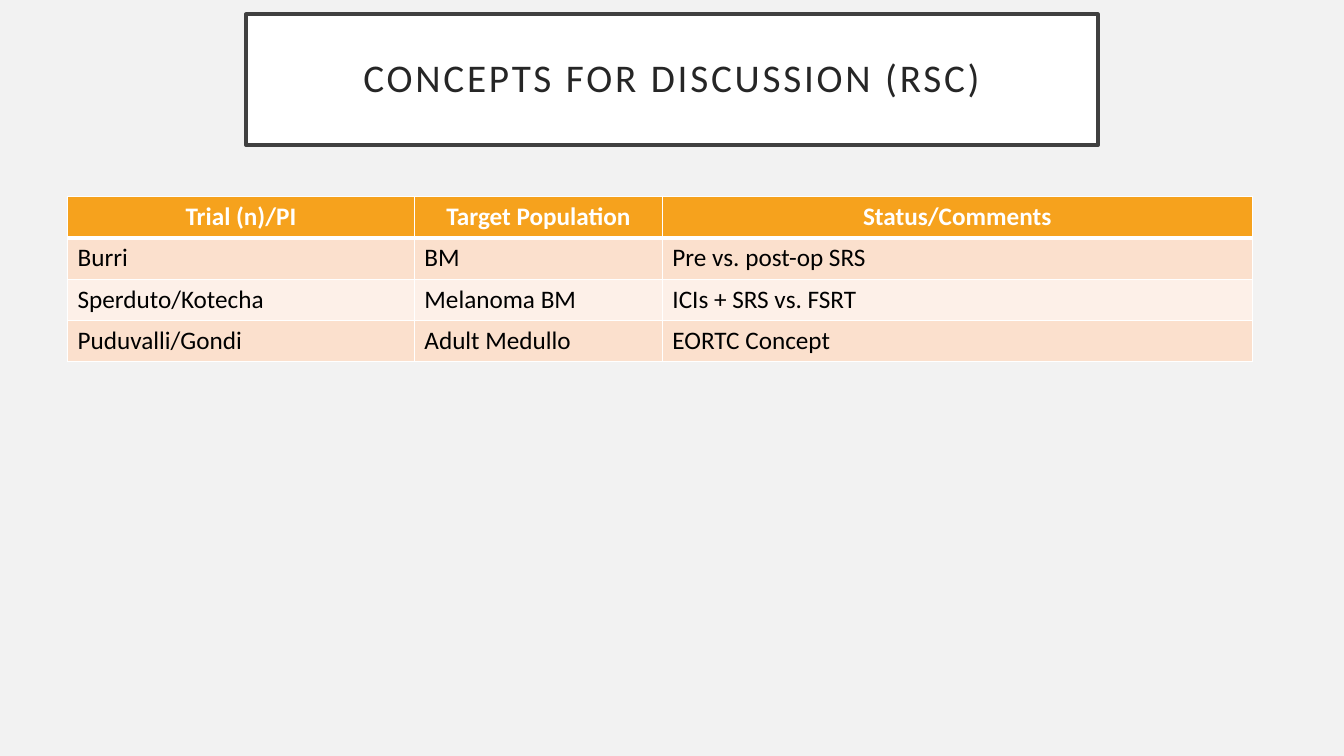
"""Build the slide of concepts for discussion."""
from dataclasses import dataclass

from lxml import etree
from pptx import Presentation
from pptx import util as u
from pptx.dml import color
from pptx.enum import text
from pptx.oxml import ns


@dataclass(frozen=True)
class Theme:
    """Hold the colours, font and type sizes."""
    font: str = "Calibri"
    title_size: int = 28
    table_size: int = 18
    title_spacing: int = 200
    background: str = "F2F2F2"
    white: str = "FFFFFF"
    title_ink: str = "262626"
    frame: str = "404040"
    header: str = "F6A21D"
    body_ink: str = "000000"
    bands: tuple = ("FBE0CD", "FDF0E8")


class SlideBuilder:
    """Draw styled elements on one slide."""

    def __init__(self, presentation, theme):
        """Add a title-only slide with a plain background."""
        self.theme = theme
        self.slide = presentation.slides.add_slide(presentation.slide_layouts[5])
        self.paint(self.slide.background.fill, theme.background)

    def paint(self, fill, colour):
        """Make a fill solid."""
        fill.solid()
        fill.fore_color.rgb = color.RGBColor.from_string(colour)

    def add_text(self, paragraph, words, size, ink, alignment, bold=False):
        """Add one styled run to a paragraph and return it."""
        paragraph.alignment = alignment
        run = paragraph.add_run()
        run.text = words
        run.font.name = self.theme.font
        run.font.size = u.Pt(size)
        run.font.bold = bold
        run.font.color.rgb = color.RGBColor.from_string(ink)
        return run

    def title(self, words, left, top, width, height):
        """Place the framed title."""
        theme = self.theme
        shape = self.slide.shapes.title
        shape.left, shape.top = u.Inches(left), u.Inches(top)
        shape.width, shape.height = u.Inches(width), u.Inches(height)
        self.paint(shape.fill, theme.white)
        self.paint(shape.line.fill, theme.frame)
        shape.line.width = u.Pt(2.5)
        frame = shape.text_frame
        frame.auto_size = text.MSO_AUTO_SIZE.NONE
        frame.word_wrap = True
        frame.vertical_anchor = text.MSO_ANCHOR.MIDDLE
        frame.margin_left = frame.margin_right = u.Inches(0.2)
        frame.margin_top = frame.margin_bottom = u.Inches(0.2)
        paragraph = frame.paragraphs[0]
        paragraph.line_spacing = 0.9
        run = self.add_text(paragraph, words, theme.title_size, theme.title_ink,
                            text.PP_ALIGN.CENTER)
        run.font._element.set("spc", str(theme.title_spacing))

    def border(self, cell, side, points):
        """Draw one white edge of a cell."""
        properties = cell._tc.get_or_add_tcPr()
        line = etree.SubElement(properties, ns.qn(f"a:ln{side}"), w=str(u.Pt(points)))
        fill = etree.SubElement(line, ns.qn("a:solidFill"))
        etree.SubElement(fill, ns.qn("a:srgbClr"), val=self.theme.white)

    def table(self, rows, left, top, widths, row_height):
        """Draw a table with a header row and banded body rows."""
        theme = self.theme
        table = self.slide.shapes.add_table(
            len(rows), len(widths), u.Inches(left), u.Inches(top),
            u.Inches(sum(widths)), u.Inches(row_height * len(rows))).table
        for column, width in zip(table.columns, widths):
            column.width = u.Inches(width)
        for row_index, row in enumerate(rows):
            table.rows[row_index].height = u.Inches(row_height)
            header = row_index == 0
            fill = theme.header if header else theme.bands[(row_index - 1) % 2]
            ink = theme.white if header else theme.body_ink
            alignment = text.PP_ALIGN.CENTER if header else text.PP_ALIGN.JUSTIFY
            edges = {"L": 1, "R": 1, "T": 3 if row_index == 1 else 1,
                     "B": 3 if header else 1}
            for column_index, words in enumerate(row):
                cell = table.cell(row_index, column_index)
                for side, points in edges.items():
                    self.border(cell, side, points)
                self.paint(cell.fill, fill)
                self.add_text(cell.text_frame.paragraphs[0], words,
                              theme.table_size, ink, alignment, header)


def main():
    """Build and save the presentation."""
    presentation = Presentation()
    presentation.slide_width = u.Inches(13.33)
    presentation.slide_height = u.Inches(7.5)
    builder = SlideBuilder(presentation, Theme())
    builder.title("CONCEPTS FOR DISCUSSION (RSC)", 2.44, 0.14, 8.45, 1.3)
    concepts = [
        ("Trial (n)/PI", "Target Population", "Status/Comments"),
        ("Burri", "BM", "Pre vs. post-op SRS"),
        ("Sperduto/Kotecha", "Melanoma BM", "ICIs + SRS vs. FSRT"),
        ("Puduvalli/Gondi", "Adult Medullo", "EORTC Concept"),
    ]
    builder.table(concepts, 0.67, 1.95, (3.44, 2.46, 5.85), 0.41)
    presentation.save("out.pptx")


if __name__ == "__main__":
    main()
